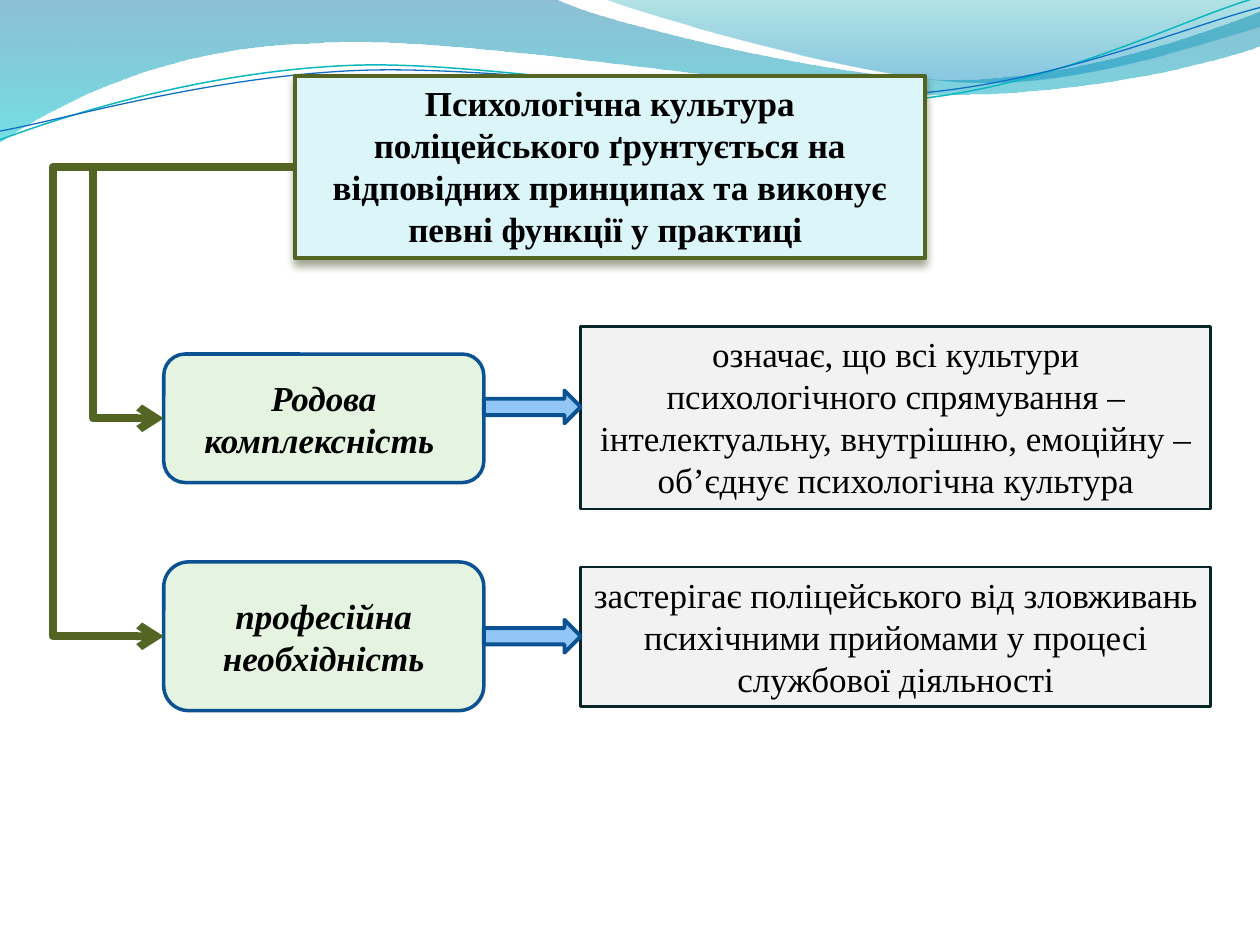
"""Build a slide on the principles of a police officer's psychological culture."""
from lxml import etree
from pptx import Presentation, util as u
from pptx.dml.color import RGBColor
from pptx.enum import shapes, text
from pptx.oxml import ns

FONT, SIZE = "Times New Roman", 20
OLIVE, BLUE = "546422", "0B5292"
TITLE = "Психологічна культура поліцейського ґрунтується на відповідних принципах та виконує певні функції у практиці "
TITLE_BOX = (2.34, 0.6, 5, 1.45)
NAME_LEFT, NAME_WIDTH = 1.3, 2.54
MEANING_LEFT, MEANING_WIDTH = 4.61, 5
ARROW_HEIGHT = 0.26
PRINCIPLES = [
    {"name": "Родова комплексність ", "name_y": (2.81, 1.02),
     "meaning": "означає, що всі культури психологічного спрямування – інтелектуальну, "
                "внутрішню, емоційну – об’єднує психологічна культура",
     "meaning_y": (2.59, 1.45), "arrow_top": 3.1, "bend": 0.74},
    {"name": "професійна необхідність", "name_y": (4.46, 1.18),
     "meaning": "застерігає поліцейського від зловживань психічними прийомами у процесі службової діяльності",
     "meaning_y": (4.5, 1.11), "arrow_top": 4.92, "bend": 0.42},
]
BANDS = [
    {"start": (-0.01, -0.01), "stops": [(0, "0074A1", 45), (1, "00C6CF", 55)],
     "steps": [(4.4, -0.01), (4.76, 0.17, 6.64, 0.63, 7.58, 0.63),
               (8.53, 0.63, 9.58, 0.26, 10, 0.09), (10.01, 0.36),
               (9.83, 0.44, 8.7, 0.76, 7.46, 0.75), (6.22, 0.75, 3.82, 0.28, 2.57, 0.34),
               (1.29, 0.36, 0.46, 0.83, -0.01, 1.13)]},
    {"start": (4.79, -0.01), "stops": [(0, "00A1A9", 30), (0.8, "008BBF", 45)],
     "steps": [(5.09, 0.11, 6.82, 0.62, 7.69, 0.65), (8.56, 0.69, 9.61, 0.32, 10, 0.21), (10, 0)]},
]
WAVES = [
    {"start": (0, 1.11), "line": ("0AB8BF", 0.85),
     "steps": [(0.48, 0.93, 1.58, 0.57, 2.77, 0.52), (3.95, 0.47, 5.93, 0.89, 7.13, 0.8),
               (8.33, 0.71, 9.38, 0.15, 9.98, -0.02)]},
    {"start": (0, 1.04), "line": ("0F6FC6", 0.75),
     "steps": [(0.47, 0.96, 1.64, 0.61, 2.83, 0.56), (4.03, 0.51, 5.97, 0.84, 7.17, 0.75),
               (8.36, 0.67, 9.41, 0.21, 10, 0.06)]},
]


def color(value):
    return RGBColor.from_string(value)


def set_line(shape, value, width):
    shape.line.color.rgb = color(value)
    shape.line.width = u.Pt(width)


def style(shape, fill, line, width):
    shape.fill.solid()
    shape.fill.fore_color.rgb = color(fill)
    set_line(shape, line, width)


def write(shape, content, grow=False, bold=False, italic=False):
    frame = shape.text_frame
    frame.text = content
    frame.word_wrap = True
    sizes, anchors = text.MSO_AUTO_SIZE, text.MSO_ANCHOR
    frame.auto_size = sizes.SHAPE_TO_FIT_TEXT if grow else sizes.NONE
    frame.vertical_anchor = anchors.TOP if grow else anchors.MIDDLE
    paragraph = frame.paragraphs[0]
    paragraph.alignment = text.PP_ALIGN.CENTER
    font = paragraph.font
    font.name, font.size, font.bold, font.italic = FONT, u.Pt(SIZE), bold, italic
    font.color.rgb = color("000000")


def add_shape(slide, kind, box):
    shape = slide.shapes.add_shape(kind, *map(u.Inches, box))
    shape.shadow.inherit = False
    return shape


def add_outline(slide, start, steps, close):
    points = [step[i:i + 2] for step in steps for i in range(0, len(step), 2)]
    builder = slide.shapes.build_freeform(*map(u.Inches, start))
    builder.add_line_segments([(u.Inches(x), u.Inches(y)) for x, y in points], close=close)
    shape = builder.convert_to_shape()
    shape.shadow.inherit = False
    segments = iter(list(shape.element.spPr.iter(ns.qn("a:lnTo"))))
    for step in steps:
        group = [next(segments) for _ in range(len(step) // 2)]
        if len(group) == 3:
            curve = etree.Element(ns.qn("a:cubicBezTo"))
            group[0].addprevious(curve)
            for segment in group:
                curve.append(segment[0])
                segment.getparent().remove(segment)
    return shape


def add_band(slide, band):
    shape = add_outline(slide, band["start"], band["steps"], True)
    shape.line.fill.background()
    shape.fill.gradient()
    shape.fill.gradient_angle = 270
    for stop, (position, value, _) in zip(shape.fill.gradient_stops, band["stops"]):
        stop.position = position
        stop.color.rgb = color(value)
    for node, (_, _, opacity) in zip(shape.element.spPr.iter(ns.qn("a:srgbClr")), band["stops"]):
        etree.SubElement(node, ns.qn("a:alpha"), val=str(opacity * 1000))
    return shape


def add_wave(slide, wave):
    shape = add_outline(slide, wave["start"], wave["steps"], False)
    shape.fill.background()
    set_line(shape, *wave["line"])
    return shape


def decorate_master(presentation, slide):
    tree = presentation.slide_master.shapes.element
    decorations = [add_band(slide, band) for band in BANDS] + [add_wave(slide, wave) for wave in WAVES]
    for index, shape in enumerate(decorations):
        shape.element.nvSpPr.cNvPr.set("id", str(101 + index))
        tree.insert(2 + index, shape.element)


def add_title(slide):
    title = slide.shapes.title
    title.left, title.top, title.width, title.height = map(u.Inches, TITLE_BOX)
    style(title, "DBF5F9", OLIVE, 2.25)
    write(title, TITLE, grow=True, bold=True)
    title.shadow.inherit = False
    effects = title.element.spPr.find(ns.qn("a:effectLst"))
    shadow = etree.SubElement(effects, ns.qn("a:outerShdw"), blurRad=str(u.Pt(4.5)),
                              dist=str(u.Pt(3)), dir="5400000", rotWithShape="0")
    shade = etree.SubElement(shadow, ns.qn("a:srgbClr"), val="3A4519")
    etree.SubElement(shade, ns.qn("a:alpha"), val="48000")


def add_branch(slide, bend, y):
    left, top, _, height = TITLE_BOX
    connector = slide.shapes.add_connector(
        shapes.MSO_CONNECTOR.ELBOW, *map(u.Inches, (left, top + height / 2, NAME_LEFT, y)))
    set_line(connector, OLIVE, 4.5)
    properties = connector.element.spPr
    guides = properties.find(ns.qn("a:prstGeom")).get_or_add_avLst()
    ratio = (left - bend) / (left - NAME_LEFT)
    etree.SubElement(guides, ns.qn("a:gd"), name="adj1", fmla=f"val {round(ratio * 100000)}")
    etree.SubElement(properties.find(ns.qn("a:ln")), ns.qn("a:tailEnd"), type="arrow")
    etree.SubElement(properties, ns.qn("a:effectLst"))


def add_principle(slide, principle):
    top, height = principle["name_y"]
    name = add_shape(slide, shapes.MSO_SHAPE.ROUNDED_RECTANGLE, (NAME_LEFT, top, NAME_WIDTH, height))
    style(name, "E5F4E0", BLUE, 2)
    write(name, principle["name"], bold=True, italic=True)

    meaning_top, meaning_height = principle["meaning_y"]
    meaning = add_shape(slide, shapes.MSO_SHAPE.RECTANGLE,
                        (MEANING_LEFT, meaning_top, MEANING_WIDTH, meaning_height))
    style(meaning, "F2F2F2", "072428", 1.5)
    write(meaning, principle["meaning"], grow=True)

    add_branch(slide, principle["bend"], top + height / 2)
    right = NAME_LEFT + NAME_WIDTH
    arrow = add_shape(slide, shapes.MSO_SHAPE.RIGHT_ARROW,
                      (right, principle["arrow_top"], MEANING_LEFT - right, ARROW_HEIGHT))
    style(arrow, "91C6F7", BLUE, 2.25)


def main():
    presentation = Presentation()
    presentation.slide_width, presentation.slide_height = u.Inches(10), u.Inches(7.5)
    slide = presentation.slides.add_slide(presentation.slide_layouts[5])
    decorate_master(presentation, slide)
    add_title(slide)
    for principle in PRINCIPLES:
        add_principle(slide, principle)
    presentation.save("out.pptx")


if __name__ == "__main__":
    main()
